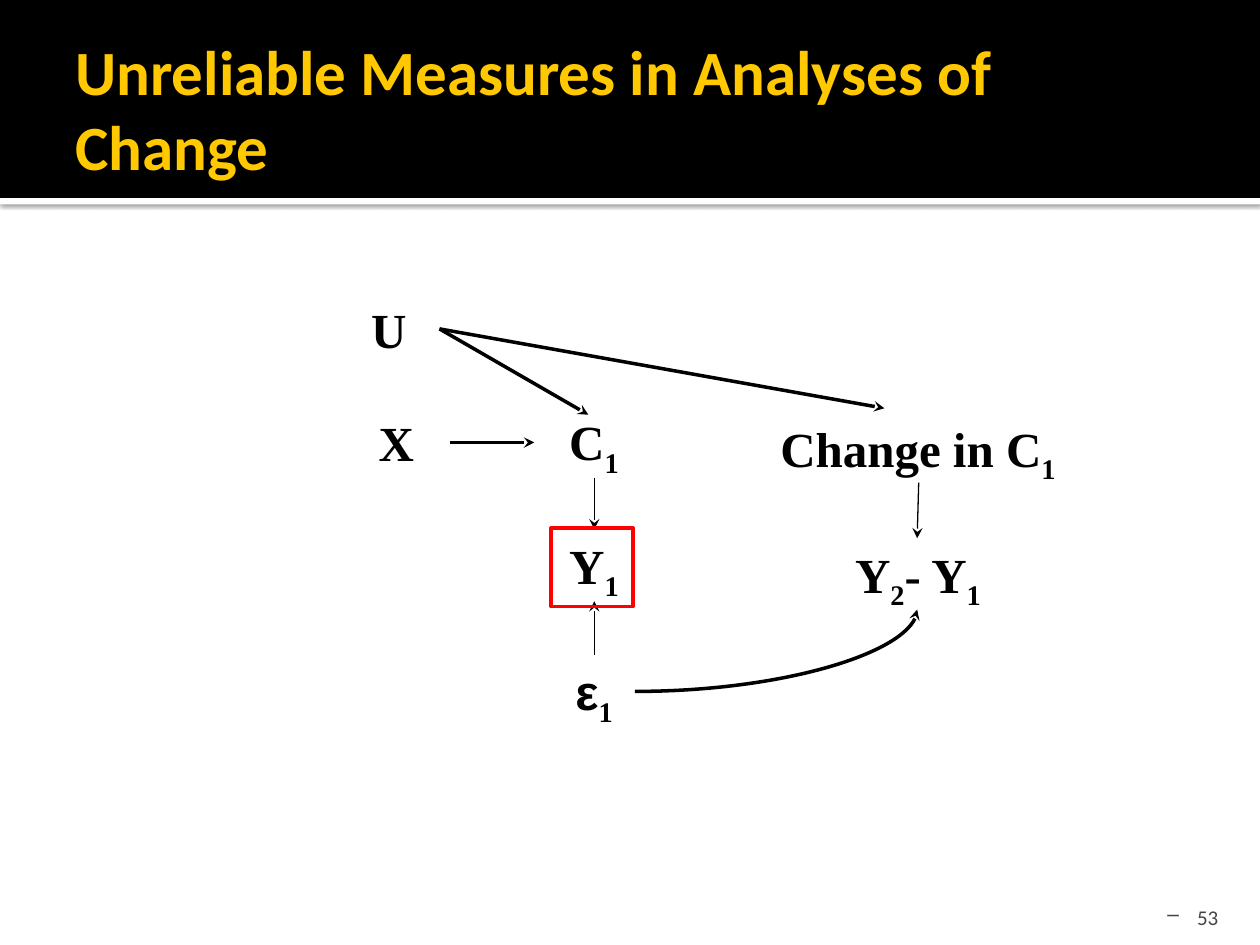
"""Build a slide with a path diagram of unreliable measures in analyses of change."""
import pptx
import pptx.util
import pptx.dml.color
import pptx.enum.shapes
import pptx.enum.text
import pptx.oxml
import pptx.oxml.ns

Cm, Pt = pptx.util.Cm, pptx.util.Pt
RGB = pptx.dml.color.RGBColor
Kind = pptx.enum.shapes.MSO_CONNECTOR
Align = pptx.enum.text.PP_ALIGN
Anchor = pptx.enum.text.MSO_ANCHOR
qn = pptx.oxml.ns.qn

BLACK = RGB(0x00, 0x00, 0x00)
WHITE = RGB(0xFF, 0xFF, 0xFF)
GOLD = RGB(0xFF, 0xC8, 0x00)
GREY = RGB(0x45, 0x45, 0x45)
RED = RGB(0xFF, 0x00, 0x00)
SHADE = (
    '<a:outerShdw blurRad="31750" dist="10160" dir="5400000" algn="tl" rotWithShape="0">'
    '<a:srgbClr val="000000"><a:alpha val="60000"/></a:srgbClr></a:outerShdw>'
)


def make(xml):
    """Parse one drawing element."""
    tag, rest = xml[1:].split(":", 1)
    return pptx.oxml.parse_xml(f"<{tag}:" + rest.replace(
        ">", f" {pptx.oxml.ns.nsdecls('a')}>", 1) if "/>" not in rest.split(">", 1)[0] + ">"
        else f"<{tag}:" + rest.replace("/>", f" {pptx.oxml.ns.nsdecls('a')}/>", 1))


class Board:
    """Hold the slide and the style of its elements."""

    def __init__(self, deck):
        self.slide = deck.slides.add_slide(deck.slide_layouts[5])
        self.shapes = self.slide.shapes

    def style(self, para, face, size, color, bold, align):
        """Set the look of a paragraph."""
        font = para.font
        font.name, font.size, font.bold = face, Pt(size), bold
        font.color.rgb = color
        para.alignment = align

    def rect(self, x, y, w, h, fill=None, line=None):
        """Add a rectangle."""
        box = self.shapes.add_shape(
            pptx.enum.shapes.MSO_SHAPE.RECTANGLE, Cm(x), Cm(y), Cm(w), Cm(h))
        box.shadow.inherit = False
        if fill is None:
            box.fill.background()
        else:
            box.fill.solid()
            box.fill.fore_color.rgb = fill
        if line is None:
            box.line.fill.background()
        else:
            box.line.color.rgb = line
            box.line.width = Pt(2)
        return box

    def band(self):
        """Add the black header and its shaded white edge behind the title."""
        edge = self.rect(0, 3.99, 25.4, 0.13, WHITE)
        edge._element.spPr.find(qn("a:effectLst")).append(make(SHADE))
        head = self.rect(0, 0, 25.4, 3.99, BLACK)
        for spot, box in enumerate((edge, head), 2):
            self.shapes._spTree.insert(spot, box._element)

    def title(self, text):
        """Fill the title placeholder."""
        box = self.shapes.title
        box.left, box.top, box.width, box.height = Cm(1.27), Cm(0.43), Cm(22.8), Cm(3.48)
        frame = box.text_frame
        frame.text = text
        frame.word_wrap = True
        frame.auto_size = pptx.enum.text.MSO_AUTO_SIZE.NONE
        frame.vertical_anchor = Anchor.MIDDLE
        frame.margin_left, frame.margin_right = Cm(0.25), Cm(0.13)
        self.style(frame.paragraphs[0], "Calibri", 36, GOLD, True, Align.LEFT)

    def text(self, x, y, w, h):
        """Add a text box and return its frame."""
        frame = self.shapes.add_textbox(Cm(x), Cm(y), Cm(w), Cm(h)).text_frame
        frame.word_wrap = True
        return frame

    def label(self, text, x, y, w, face=None):
        """Add a centred label in which underscores switch subscript on and off."""
        para = self.text(x, y, w, 1.45).paragraphs[0]
        self.style(para, "Times New Roman", 28, BLACK, True, Align.CENTER)
        for spot, part in enumerate(text.split("_")):
            if part:
                run = para.add_run()
                run.text = part
                if spot % 2:
                    run.font._element.set("baseline", "-25000")
                elif face:
                    run.font.name = face

    def page(self, text):
        """Add the page number with its dash."""
        frame = self.text(22.78, 17.98, 2.03, 0.76)
        frame.vertical_anchor = Anchor.BOTTOM
        frame.margin_bottom = 0
        para = frame.paragraphs[0]
        para.text = text
        self.style(para, "Calibri", 12, GREY, False, Align.RIGHT)
        prop = para._p.get_or_add_pPr()
        prop.set("marL", str(Cm(0.6)))
        prop.set("indent", str(-Cm(0.6)))
        prop.insert(0, make('<a:buChar char="–"/>'))

    def arrow(self, x, y, end, down, width=2, kind=Kind.STRAIGHT):
        """Add an arrow from (x, y) to (end, down)."""
        line = self.shapes.add_connector(kind, Cm(x), Cm(y), Cm(end), Cm(down))
        line.line.color.rgb = BLACK
        line.line.width = Pt(width)
        line.line._get_or_add_ln().append(make('<a:tailEnd type="stealth"/>'))
        prop = line._element.spPr
        prop.append(make("<a:effectLst/>"))
        if kind == Kind.CURVE:
            prop.find(qn("a:prstGeom")).set("prst", "curvedConnector2")


def main():
    """Draw and save the slide."""
    deck = pptx.Presentation()
    deck.slide_width, deck.slide_height = Cm(25.4), Cm(19.05)
    board = Board(deck)
    board.band()
    board.title("Unreliable Measures in Analyses of Change")
    board.page("53")

    for item in (
        ("U", 6.81, 5.92, 2.06),
        ("X", 6.91, 8.2, 2.16),
        ("C_1", 10.77, 8.18, 2.41),
        ("Change in C_1", 15.24, 8.31, 6.53),
        ("Y_1", 10.77, 10.67, 2.41),
        ("Y_2_- Y_1", 16.89, 10.85, 3.23),
        ("ε_1", 11.15, 13.21, 1.65, "Arial"),
    ):
        board.label(*item)

    for item in (
        (8.86, 6.63, 11.86, 8.36),
        (8.86, 6.63, 17.83, 8.23),
        (9.07, 8.92, 10.77, 8.92),
        (11.98, 9.63, 11.98, 10.67, 0.75),
        (11.98, 13.21, 11.98, 12.12, 0.75),
        (18.52, 9.73, 18.49, 10.85, 0.75),
        (12.8, 13.94, 18.49, 12.29, 2, Kind.CURVE),
    ):
        board.arrow(*item)

    board.rect(11.11, 10.64, 1.65, 1.59, line=RED)
    deck.save("out.pptx")


if __name__ == "__main__":
    main()
